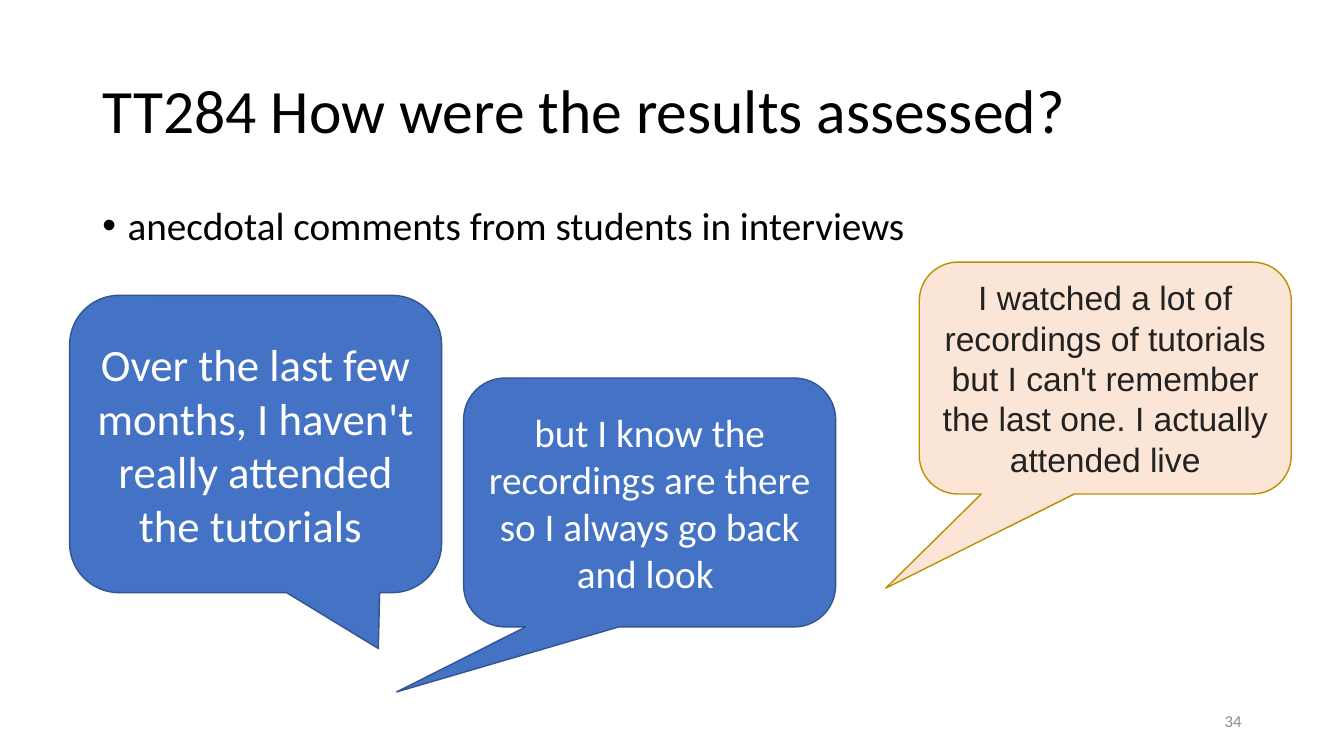
from lxml import etree
from pptx import Presentation
from pptx.dml.color import RGBColor
from pptx.enum.shapes import MSO_SHAPE
from pptx.enum.text import MSO_ANCHOR, PP_ALIGN
from pptx.oxml.ns import qn
from pptx.util import Inches, Pt

CALLOUT = MSO_SHAPE.ROUNDED_RECTANGULAR_CALLOUT
TOP, MIDDLE = MSO_ANCHOR.TOP, MSO_ANCHOR.MIDDLE
LEFT, CENTER, RIGHT = PP_ALIGN.LEFT, PP_ALIGN.CENTER, PP_ALIGN.RIGHT

BLACK = RGBColor(0x00, 0x00, 0x00)
WHITE = RGBColor(0xFF, 0xFF, 0xFF)
GRAY = RGBColor(0x8C, 0x8C, 0x8C)
DARK = RGBColor(0x22, 0x22, 0x22)
BLUE = RGBColor(0x44, 0x72, 0xC4)
NAVY = RGBColor(0x32, 0x54, 0x91)
PEACH = RGBColor(0xFB, 0xE5, 0xD6)
GOLD = RGBColor(0xBD, 0x8E, 0x00)

presentation = Presentation()
presentation.slide_width = Inches(13.33)
presentation.slide_height = Inches(7.5)
slide = presentation.slides.add_slide(presentation.slide_layouts[6])


def place(left, top, width, height):
    """Turn percentages of the slide's size into lengths."""
    across, down = presentation.slide_width / 100, presentation.slide_height / 100
    return [round(share) for share in
            (left * across, top * down, width * across, height * down)]


def write(shape, text, size, color, align, anchor, font="Calibri"):
    frame = shape.text_frame
    frame.word_wrap = True
    frame.vertical_anchor = anchor
    paragraph = frame.paragraphs[0]
    paragraph.alignment = align
    run = paragraph.add_run()
    run.text = text
    run.font.name = font
    run.font.size = Pt(size)
    run.font.color.rgb = color
    return paragraph


MARGIN = 6.88
title = slide.shapes.add_textbox(*place(MARGIN, 5.33, 86.25, 19.33))
body = slide.shapes.add_textbox(*place(MARGIN, 26.67, 89.18, 63.47))
heading = write(title, "TT284 How were the results assessed?", 44, BLACK, LEFT, MIDDLE)
point = write(body, "anecdotal comments from students in interviews", 28, BLACK, LEFT, TOP)
for paragraph in (heading, point):
    paragraph.line_spacing = 0.9

point.space_before = Pt(10)
properties = point._p.get_or_add_pPr()
properties.set("marL", str(Inches(0.25)))
properties.set("indent", str(-Inches(0.25)))
etree.SubElement(properties, qn("a:buFont")).set("typeface", "Arial")
etree.SubElement(properties, qn("a:buChar")).set("char", "•")

BUBBLE_WIDTH = 27.68
BLUE_STYLE = {"fill": BLUE, "line": NAVY, "color": WHITE, "font": "Calibri"}
PEACH_STYLE = {"fill": PEACH, "line": GOLD, "color": DARK, "font": "Arial"}
# left, top, height, pointer across, pointer down, text size, style, quote
bubbles = [
    (68.4, 34.67, 30.67, -0.59, 0.906, 24, PEACH_STYLE,
     "I watched a lot of recordings of tutorials but I can't remember "
     "the last one. I actually attended live"),
    (5.18, 39.07, 39.33, 0.33, 0.688, 32, BLUE_STYLE,
     "Over the last few months, I haven't really attended the tutorials "),
    (34.5, 50, 32.93, -0.68, 0.761, 28, BLUE_STYLE,
     "but I know the recordings are there so I always go back and look "),
]
for left, top, height, across, down, size, style, quote in bubbles:
    bubble = slide.shapes.add_shape(CALLOUT, *place(left, top, BUBBLE_WIDTH, height))
    bubble.shadow.inherit = False
    bubble.adjustments[0] = across
    bubble.adjustments[1] = down
    bubble.fill.solid()
    bubble.fill.fore_color.rgb = style["fill"]
    bubble.line.color.rgb = style["line"]
    bubble.line.width = Pt(1)
    write(bubble, quote, size, style["color"], CENTER, MIDDLE, style["font"])

page_number = slide.shapes.add_textbox(*place(70.63, 92.67, 22.5, 5.33))
write(page_number, "34", 12, GRAY, RIGHT, MIDDLE)

presentation.save("out.pptx")
